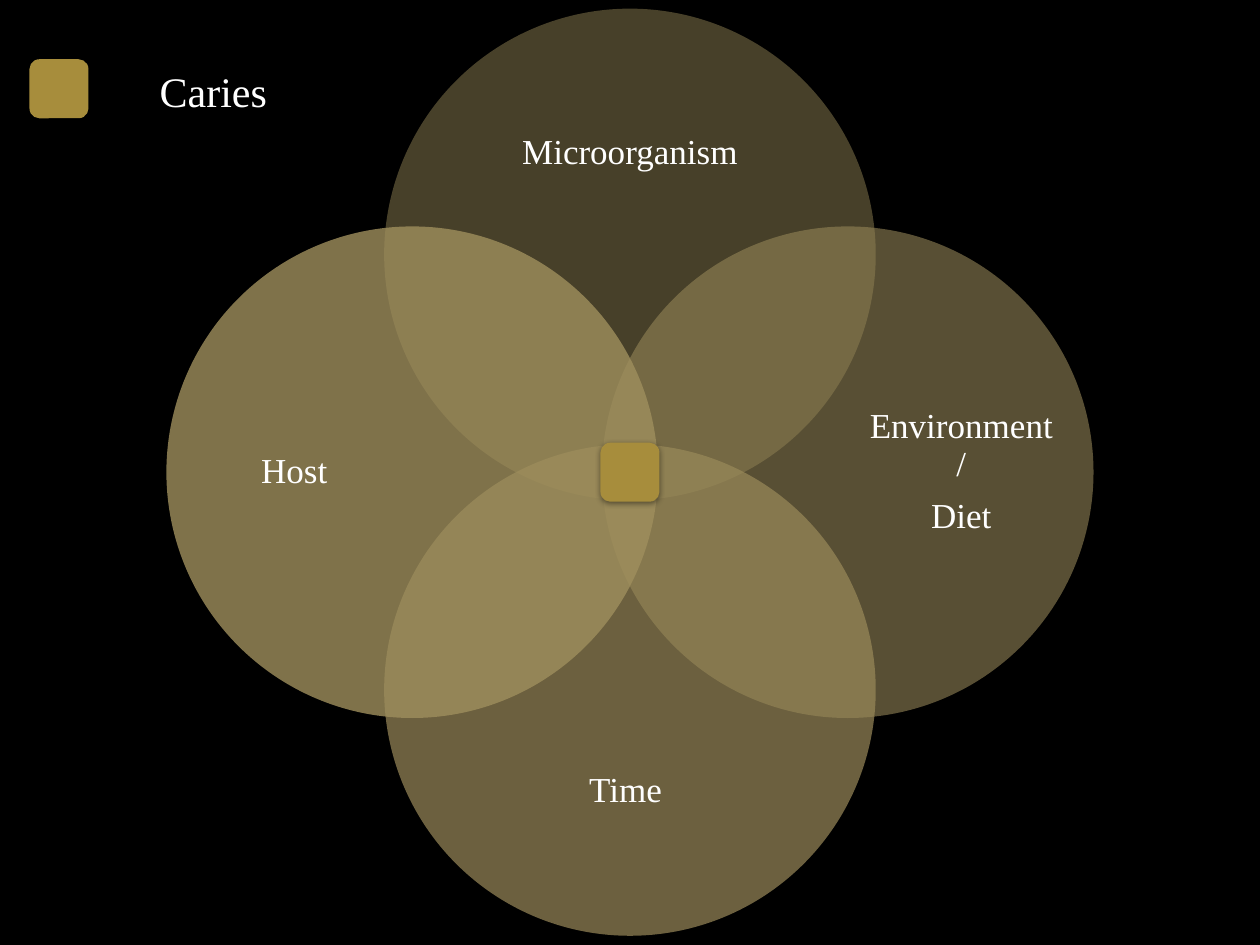
from dataclasses import dataclass

from lxml import etree
from pptx import Presentation
from pptx.dml.color import RGBColor
from pptx.enum import shapes, text
from pptx.oxml import ns
from pptx.util import Cm, Pt

COLORS = {
    "background": "000000",
    "text": "FFFFFF",
    "caries": "A78D3C",
    "microorganism": "8F8153",
    "environment": "948557",
    "time": "9A8A5A",
    "host": "9F8F5D",
}
FONT = "Times New Roman"

# Lengths in centimetres
CENTER_X, CENTER_Y = 12.7, 9.52
DIAMETER = 9.91
CIRCLE_OFFSET = 4.39
MARKER = 1.19
WIDE_LABEL = (7.62, 3.15, 6.43)  # width, height, distance from the centre
TALL_LABEL = (3.81, 7.62, 6.68)


@dataclass
class Factor:
    color: str
    opacity: int
    dx: int
    dy: int
    lines: tuple[str, ...]


FACTORS = [
    Factor("microorganism", 50, 0, -1, ("Microorganism",)),
    Factor("environment", 60, 1, 0, ("Environment /", "Diet")),
    Factor("time", 70, 0, 1, ("Time ",)),
    Factor("host", 80, -1, 0, ("Host ",)),
]


def rgb(name: str) -> RGBColor:
    return RGBColor.from_string(COLORS[name])


def add_run(p, content: str, size: int) -> None:
    r = p.add_run()
    r.text = content
    r.font.size = Pt(size)
    r.font.name = FONT
    r.font.color.rgb = rgb("text")


def add_filled(s, kind, cx: float, cy: float, size: float, color: str):
    """Draw a square-framed shape around a centre point."""
    sp = s.shapes.add_shape(kind, Cm(cx - size / 2), Cm(cy - size / 2), Cm(size), Cm(size))
    sp.shadow.inherit = False
    sp.fill.solid()
    sp.fill.fore_color.rgb = rgb(color)
    sp.line.fill.background()
    return sp


def add_factor(s, factor: Factor) -> None:
    sp = add_filled(s, shapes.MSO_SHAPE.OVAL, CENTER_X + factor.dx * CIRCLE_OFFSET,
                    CENTER_Y + factor.dy * CIRCLE_OFFSET, DIAMETER, factor.color)
    srgb = sp.fill._xPr.find(".//" + ns.qn("a:srgbClr"))
    etree.SubElement(srgb, ns.qn("a:alpha"), val=str(factor.opacity * 1000))

    # Label in the outer part of the circle
    width, height, offset = TALL_LABEL if factor.dx else WIDE_LABEL
    box = s.shapes.add_textbox(Cm(CENTER_X + factor.dx * offset - width / 2),
                               Cm(CENTER_Y + factor.dy * offset - height / 2),
                               Cm(width), Cm(height))
    tf = box.text_frame
    tf.word_wrap = True
    tf.vertical_anchor = text.MSO_ANCHOR.MIDDLE
    tf.margin_left = tf.margin_right = tf.margin_top = tf.margin_bottom = 0
    for i, line in enumerate(factor.lines):
        p = tf.add_paragraph() if i else tf.paragraphs[0]
        p.alignment = text.PP_ALIGN.CENTER
        p.line_spacing = 0.9
        p.space_after = Pt(8)
        add_run(p, line, 20)


def add_marker(s, cx: float, cy: float) -> None:
    sp = add_filled(s, shapes.MSO_SHAPE.ROUNDED_RECTANGLE, cx, cy, MARKER, "caries")
    effects = sp._element.spPr.find(ns.qn("a:effectLst"))
    shadow = etree.SubElement(effects, ns.qn("a:outerShdw"), blurRad=str(Pt(3.5)),
                              dist=str(Pt(1.1)), dir="5400000", rotWithShape="0")
    color = etree.SubElement(shadow, ns.qn("a:srgbClr"), val="000000")
    etree.SubElement(color, ns.qn("a:alpha"), val="45000")


def main() -> None:
    prs = Presentation()
    prs.slide_width, prs.slide_height = Cm(25.4), Cm(19.05)
    s = prs.slides.add_slide(prs.slide_layouts[6])
    s.background.fill.solid()
    s.background.fill.fore_color.rgb = rgb("background")

    # Overlapping factors
    for factor in FACTORS:
        add_factor(s, factor)

    # Marker at the overlap and in the legend
    add_marker(s, CENTER_X, CENTER_Y)
    add_marker(s, 1.19, 1.79)

    # Legend label
    box = s.shapes.add_textbox(Cm(2.97), Cm(1.19), Cm(4.78), Cm(1.28))
    tf = box.text_frame
    tf.word_wrap = True
    tf.auto_size = text.MSO_AUTO_SIZE.SHAPE_TO_FIT_TEXT
    add_run(tf.paragraphs[0], "Caries", 24)

    prs.save("out.pptx")


if __name__ == "__main__":
    main()
